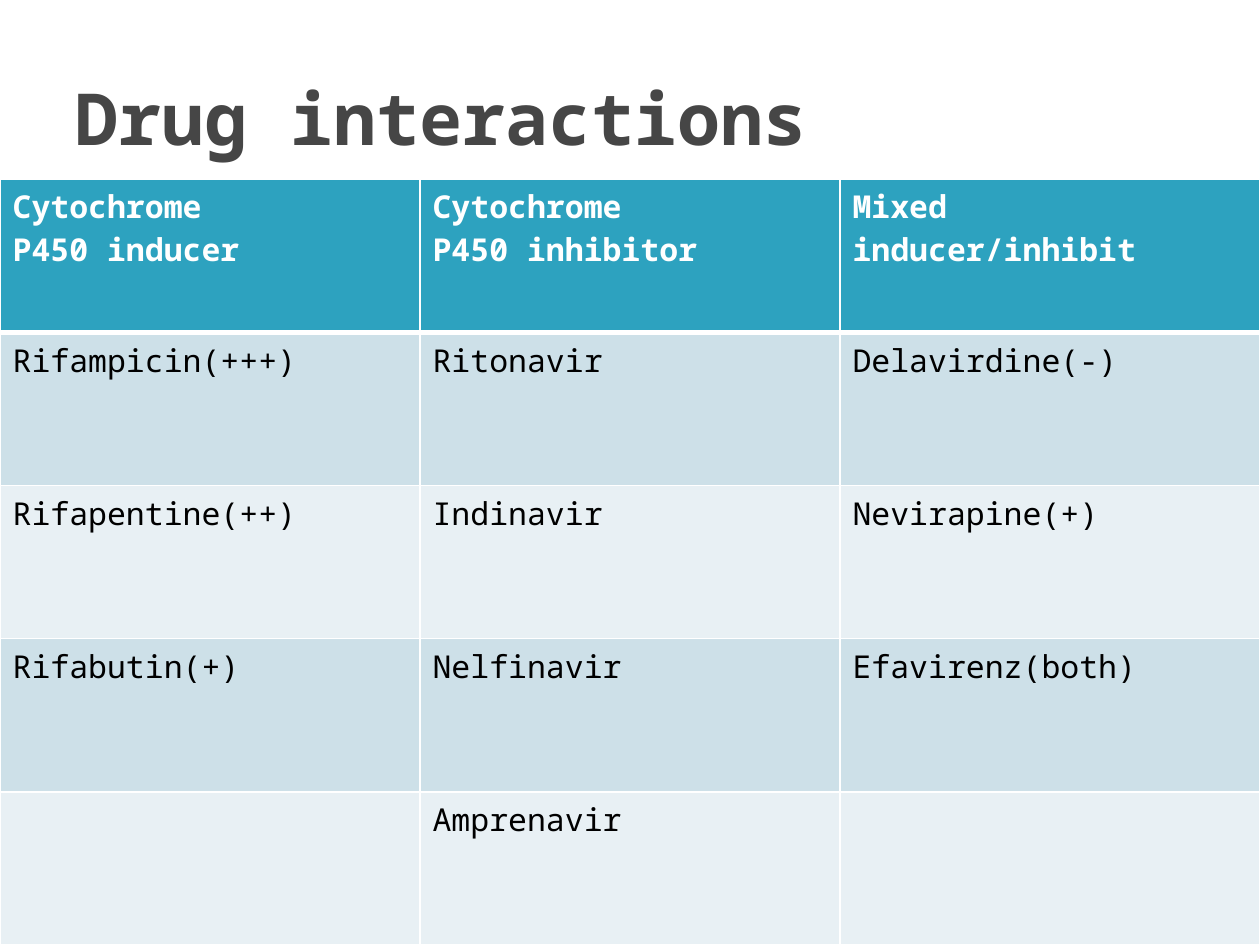
from pptx import Presentation
from pptx.dml.color import RGBColor
from pptx.enum.text import MSO_ANCHOR
from pptx.oxml import parse_xml
from pptx.oxml.ns import nsdecls
from pptx.util import Cm, Pt

TITLE = "Drug interactions"
ROWS = [
    ["Cytochrome\nP450 inducer", "Cytochrome\nP450 inhibitor", "Mixed\ninducer/inhibit"],
    ["Rifampicin(+++)", "Ritonavir", "Delavirdine(-)"],
    ["Rifapentine(++)", "Indinavir", "Nevirapine(+)"],
    ["Rifabutin(+)", "Nelfinavir", "Efavirenz(both)"],
    ["", "Amprenavir", ""],
]
FONT = "Noto Sans Mono"
COLORS = {
    "title": "464646",
    "header": "2DA2BF",
    "header_text": "FFFFFF",
    "odd": "CDE0E8",
    "even": "E8F0F4",
    "body_text": "000000",
    "border": "FFFFFF",
}
WIDTH, HEIGHT = Cm(25.4), Cm(19.05)
TABLE_TOP = Cm(3.61)


def write(tf, text, size, color, bold):
    """Fill a text frame with one paragraph per line of text."""
    for i, line in enumerate(text.split("\n")):
        p = tf.paragraphs[0] if i == 0 else tf.add_paragraph()
        r = p.add_run()
        r.text = line
        r.font.name = FONT
        r.font.size = Pt(size)
        r.font.bold = bold
        r.font.color.rgb = RGBColor.from_string(COLORS[color])


def set_borders(cell, widths):
    tcPr = cell._tc.get_or_add_tcPr()
    for i, (side, width) in enumerate(widths.items()):
        tcPr.insert(i, parse_xml(
            f'<a:ln{side} {nsdecls("a")} w="{Pt(width)}"><a:solidFill>'
            f'<a:srgbClr val="{COLORS["border"]}"/></a:solidFill></a:ln{side}>'))


def add_title(s):
    tf = s.shapes.add_textbox(Cm(1.27), Cm(0.76), Cm(22.86), Cm(3.18)).text_frame
    tf.word_wrap = True
    tf.vertical_anchor = MSO_ANCHOR.MIDDLE
    write(tf, TITLE, 41, "title", True)


def add_drug_table(s):
    table = s.shapes.add_table(len(ROWS), len(ROWS[0]), 0, TABLE_TOP,
                               WIDTH, HEIGHT - TABLE_TOP).table
    for i, row in enumerate(ROWS):
        header = i == 0
        fill = "header" if header else ("odd" if i % 2 else "even")
        for j, text in enumerate(row):
            cell = table.cell(i, j)
            cell.fill.solid()
            cell.fill.fore_color.rgb = RGBColor.from_string(COLORS[fill])
            set_borders(cell, {"L": 1, "R": 1, "T": 3 if i == 1 else 1,
                               "B": 3 if header else 1})
            if text:
                write(cell.text_frame, text, 18,
                      "header_text" if header else "body_text", header)


def main():
    prs = Presentation()
    prs.slide_width, prs.slide_height = WIDTH, HEIGHT
    s = prs.slides.add_slide(prs.slide_layouts[6])
    add_drug_table(s)
    add_title(s)
    prs.save("out.pptx")


if __name__ == "__main__":
    main()
